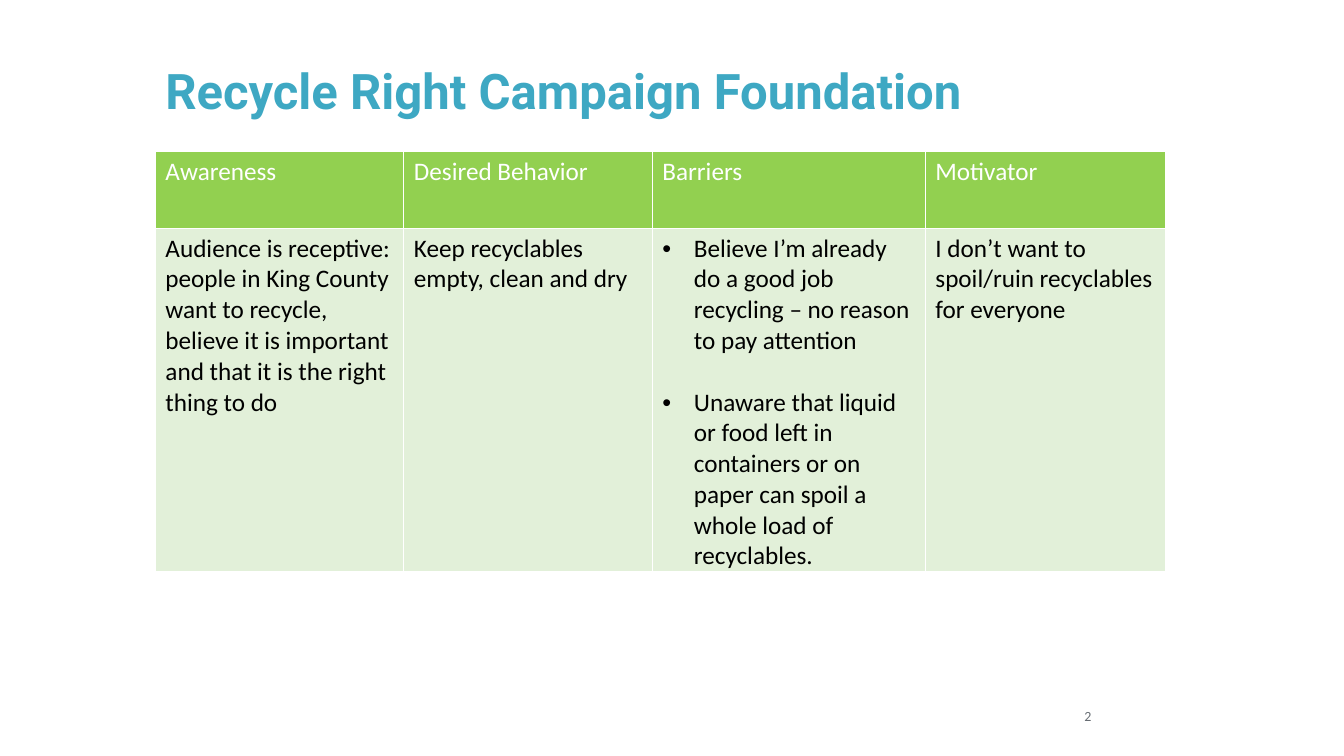
from lxml import etree
from pptx import Presentation
from pptx.enum import text
from pptx.oxml import ns
from pptx.dml.color import RGBColor
from pptx.util import Pt

COLORS = {"title": "3EA8C3", "number": "676D73", "header": "92D050",
          "body": "E2F0D9", "white": "FFFFFF", "black": "000000"}


class SlideBuilder:
    def __init__(self, deck):
        self.page = deck.slides.add_slide(deck.slide_layouts[6])
        self.font = "Calibri"

    def span(self, para, words, size, color, font=None, bold=False):
        span = para.add_run()
        span.text = words
        span.font.name = font or self.font
        span.font.size = Pt(size)
        span.font.bold = bold
        span.font.color.rgb = RGBColor.from_string(COLORS[color])

    def label(self, words, left, top, width, height, size, color,
              anchor=text.MSO_ANCHOR.TOP, spacing=1.0, **style):
        box = self.page.shapes.add_textbox(Pt(left), Pt(top), Pt(width), Pt(height))
        frame = box.text_frame
        frame.word_wrap = True
        frame.vertical_anchor = anchor
        para = frame.paragraphs[0]
        para.line_spacing = spacing
        self.span(para, words, size, color, **style)

    def bullet(self, para, indent):
        props = para._p.get_or_add_pPr()
        props.set("marL", str(Pt(indent)))
        props.set("indent", str(-Pt(indent)))
        etree.SubElement(props, ns.qn("a:buFont"), typeface="Arial")
        etree.SubElement(props, ns.qn("a:buChar"), char="•")

    def borders(self, cell, color, weight):
        props = cell._tc.get_or_add_tcPr()
        for place, side in enumerate(("lnL", "lnR", "lnT", "lnB")):
            line = etree.Element(ns.qn("a:" + side), w=str(Pt(weight)))
            fill = etree.SubElement(line, ns.qn("a:solidFill"))
            etree.SubElement(fill, ns.qn("a:srgbClr"), val=COLORS[color])
            props.insert(place, line)

    def cell(self, cell, content, fill, color):
        cell.fill.solid()
        cell.fill.fore_color.rgb = RGBColor.from_string(COLORS[fill])
        cell.margin_bottom = 0
        self.borders(cell, "white", 1)
        bulleted = isinstance(content, list)
        for index, words in enumerate(content if bulleted else [content]):
            frame = cell.text_frame
            para = frame.add_paragraph() if index else frame.paragraphs[0]
            if index:
                para.space_before = Pt(22)
            if bulleted:
                self.bullet(para, 22.5)
            self.span(para, words, 18, color)

    def table(self, rows, left, top, widths, heights):
        table = self.page.shapes.add_table(
            len(rows), len(widths), Pt(left), Pt(top),
            Pt(sum(widths)), Pt(sum(heights))).table
        for column, width in zip(table.columns, widths):
            column.width = Pt(width)
        for number, (row, height) in enumerate(zip(rows, heights)):
            table.rows[number].height = Pt(height)
            fill, color = ("body", "black") if number else ("header", "white")
            for column, content in enumerate(row):
                self.cell(table.cell(number, column), content, fill, color)


def main():
    deck = Presentation()
    deck.slide_width, deck.slide_height = Pt(960), Pt(540)
    builder = SlideBuilder(deck)

    # Title
    builder.label("Recycle Right Campaign Foundation", 111, 21.6, 800, 90, 35, "title",
                  anchor=text.MSO_ANCHOR.MIDDLE, spacing=0.9, font="Roboto", bold=True)

    # Campaign table
    builder.table([
        ["Awareness", "Desired Behavior", "Barriers", "Motivator"],
        ["Audience is receptive: people in King County want to recycle, believe it is "
         "important and that it is the right thing to do",
         "Keep recyclables empty, clean and dry",
         ["Believe I’m already do a good job recycling – no reason to pay attention",
          "Unaware that liquid or food left in containers or on paper can spoil a whole "
          "load of recyclables."],
         "I don’t want to spoil/ruin recyclables for everyone"],
    ], 111, 108, [177.5, 177.5, 195, 172], [55, 245])

    # Page number
    builder.label("2", 767.5, 502, 32.5, 19.5, 10, "number")

    deck.save("out.pptx")


if __name__ == "__main__":
    main()
